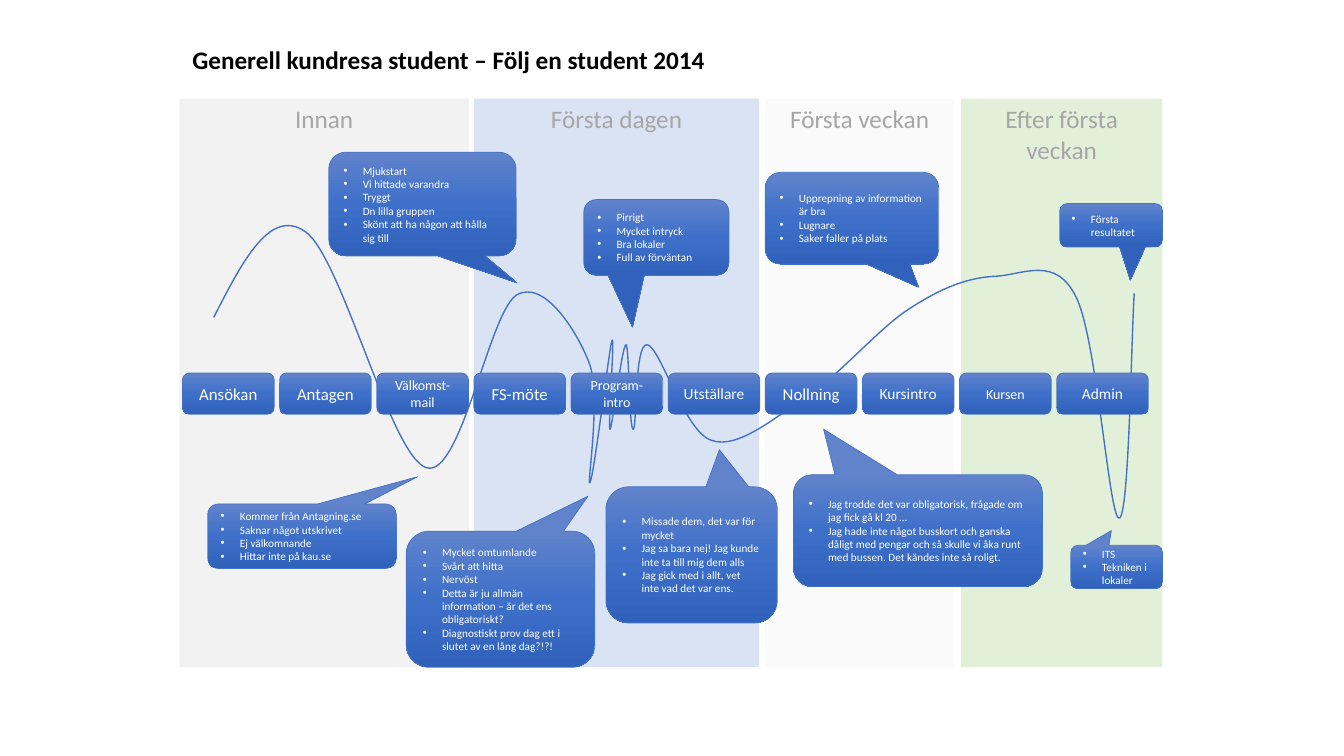
from copy import deepcopy
from lxml import etree
from pptx import Presentation, util as u
from pptx.dml.color import RGBColor
from pptx.enum import shapes, text
from pptx.oxml.ns import qn

BLACK = RGBColor(0x00, 0x00, 0x00)
WHITE = RGBColor(0xFF, 0xFF, 0xFF)
GRAY = RGBColor(0xA6, 0xA6, 0xA6)
BLUE = RGBColor(0x44, 0x72, 0xC4)
SILVER = RGBColor(0xF2, 0xF2, 0xF2)
ICE = RGBColor(0xDA, 0xE3, 0xF3)
PALE = RGBColor(0xFA, 0xFA, 0xFA)
GREEN = RGBColor(0xE2, 0xF0, 0xD9)
SHADES = [
    RGBColor(0x61, 0x83, 0xCB),
    RGBColor(0x3E, 0x70, 0xCA),
    RGBColor(0x30, 0x62, 0xBB),
]

KIND = shapes.MSO_SHAPE
MID = text.MSO_ANCHOR.MIDDLE
TOP = text.MSO_ANCHOR.TOP
LEFT = text.PP_ALIGN.LEFT
MAIN = text.PP_ALIGN.CENTER

deck = Presentation()
deck.slide_width = u.Inches(13.33)
deck.slide_height = u.Inches(7.5)
slide = deck.slides.add_slide(deck.slide_layouts[6])


def write(box, lines, size, color, anchor, align, bold=False, dots=False):
    frame = box.text_frame
    frame.word_wrap = True
    frame.vertical_anchor = anchor
    look = {"name": "Calibri", "size": u.Pt(size), "bold": bold}
    for i, line in enumerate(lines):
        para = frame.paragraphs[0] if i == 0 else frame.add_paragraph()
        para.alignment = align
        if dots:
            props = para._p.get_or_add_pPr()
            props.set("marL", str(u.Inches(0.19)))
            props.set("indent", str(u.Inches(-0.19)))
            etree.SubElement(props, qn("a:buFont")).set("typeface", "Arial")
            etree.SubElement(props, qn("a:buChar")).set("char", "•")
        run = para.add_run()
        run.text = line
        for key, value in look.items():
            setattr(run.font, key, value)
        run.font.color.rgb = color


def block(kind, place):
    box = slide.shapes.add_shape(kind, *map(u.Inches, place))
    box.shadow.inherit = False
    box.fill.gradient()
    box.fill.gradient_angle = 270
    stops = box._element.spPr.find(qn("a:gradFill")).find(qn("a:gsLst"))
    stops.insert(1, deepcopy(stops[0]))
    for i, stop in enumerate(box.fill.gradient_stops):
        stop.position = i / 2
        stop.color.rgb = SHADES[i]
    box.line.color.rgb = BLUE
    box.line.width = u.Pt(0.5)
    return box


bands = [
    ("Innan", 1.78, 2.87, SILVER),
    ("Första dagen", 4.7, 2.83, ICE),
    ("Första veckan", 7.59, 1.87, PALE),
    ("Efter första veckan", 9.53, 2, GREEN),
]
for name, left, width, color in bands:
    place = map(u.Inches, (left, 0.98, width, 5.64))
    band = slide.shapes.add_shape(KIND.RECTANGLE, *place)
    band.shadow.inherit = False
    band.fill.solid()
    band.fill.fore_color.rgb = color
    band.line.fill.background()
    write(band, [name], 18, GRAY, TOP, MAIN)

curves = [
    (2.4, 2.6, 2.68, 2.05, 3.03, 2.3),
    (3.39, 2.55, 3.88, 4.54, 4.23, 4.64),
    (4.57, 4.75, 4.85, 3.11, 5.12, 2.93),
    (5.39, 2.76, 5.72, 3.28, 5.84, 3.59),
    (5.97, 3.9, 5.82, 4.82, 5.85, 4.79),
    (5.89, 4.75, 6.04, 3.47, 6.07, 3.38),
    (6.1, 3.29, 6.03, 4.25, 6.05, 4.26),
    (6.07, 4.27, 6.17, 3.42, 6.21, 3.42),
    (6.24, 3.42, 6.24, 4.26, 6.28, 4.26),
    (6.32, 4.26, 6.29, 3.4, 6.42, 3.42),
    (6.55, 3.44, 6.79, 4.29, 7.06, 4.37),
    (7.32, 4.46, 7.69, 4.14, 8.02, 3.92),
    (8.35, 3.7, 8.73, 3.24, 9.04, 3.05),
    (9.35, 2.85, 9.61, 2.75, 9.89, 2.74),
    (10.16, 2.72, 10.47, 2.54, 10.67, 2.94),
    (10.88, 3.34, 11, 5.15, 11.1, 5.14),
    (11.2, 5.14, 11.22, 3.35, 11.25, 2.91),
]
pen = slide.shapes.build_freeform(u.Inches(2.12), u.Inches(3.15))
ends = [(11.25, 2.24), (11.25, 5.14)]
pen.add_line_segments([tuple(map(u.Inches, end)) for end in ends], close=False)
mood = pen.convert_to_shape()
mood.shadow.inherit = False
mood.fill.background()
mood.line.color.rgb = BLUE
mood.line.width = u.Pt(1)
track = next(mood._element.iter(qn("a:path")))
for line in track.findall(qn("a:lnTo")):
    track.remove(line)
for curve in curves:
    bend = etree.SubElement(track, qn("a:cubicBezTo"))
    for x, y in zip(curve[::2], curve[1::2]):
        spot = etree.SubElement(bend, qn("a:pt"))
        spot.set("x", str(u.Inches(x) - mood.left))
        spot.set("y", str(u.Inches(y) - mood.top))

steps = [
    (["Ansökan"], 12),
    (["Antagen"], 12),
    (["Välkomst-", "mail"], 10),
    (["FS-möte"], 12),
    (["Program-", "intro"], 10),
    (["Utställare"], 11),
    (["Nollning"], 12),
    (["Kursintro"], 11),
    (["Kursen"], 10),
    (["Admin"], 11),
]
for i, (lines, size) in enumerate(steps):
    box = block(KIND.ROUNDED_RECTANGLE, (1.81 + i * 8.67 / 9, 3.7, 0.91, 0.41))
    write(box, lines, size, WHITE, MID, MAIN)

title = slide.shapes.add_textbox(*map(u.Inches, (1.81, 0.27, 9, 0.67)))
write(title, ["Generell kundresa student – Följ en student 2014"], 18, BLACK, MID, LEFT, bold=True)
title.text_frame.paragraphs[0].line_spacing = 0.9

quotes = [
    ((2.06, 5, 1.87, 0.64), (0.614, -0.923), [
        "Kommer från Antagning.se", "Saknar något utskrivet",
        "Ej välkomnande", "Hittar inte på kau.se"]),
    ((4.03, 5.27, 1.87, 1.35), (0.464, -0.758), [
        "Mycket omtumlande", "Svårt att hitta", "Nervöst",
        "Detta är ju allmän information – är det ens obligatoriskt?",
        "Diagnostiskt prov dag ett i slutet av en lång dag?!?!"]),
    ((6.01, 4.83, 1.7, 1.35), (0.162, -0.773), [
        "Missade dem, det var för mycket",
        "Jag sa bara nej! Jag kunde inte ta till mig dem alls",
        "Jag gick med i allt, vet inte vad det var ens."]),
    ((7.87, 4.71, 2.47, 1.11), (-0.379, -0.907), [
        "Jag trodde det var obligatorisk, frågade om jag fick gå kl 20 …",
        "Jag hade inte något busskort och ganska dåligt med pengar och så "
        "skulle vi åka runt med bussen. Det kändes inte så roligt."]),
    ((10.62, 5.41, 0.91, 0.43), (-0.057, -0.84), ["ITS", "Tekniken i lokaler"]),
    ((3.26, 1.51, 1.86, 1.03), (0.505, 0.759), [
        "Mjukstart", "Vi hittade varandra", "Tryggt", "Dn lilla gruppen",
        "Skönt att ha någon att hålla sig till"]),
    ((5.79, 1.98, 1.44, 0.75), (-0.164, 1.188), [
        "Pirrigt", "Mycket intryck", "Bra lokaler", "Full av förväntan"]),
    ((7.59, 1.71, 1.72, 0.91), (0.384, 0.753), [
        "Upprepning av information är bra", "Lugnare", "Saker faller på plats"]),
    ((10.51, 2.02, 1.02, 0.43), (0.187, 1.27), ["Första resultatet"]),
]
for place, tip, lines in quotes:
    box = block(KIND.ROUNDED_RECTANGULAR_CALLOUT, place)
    box.adjustments[0], box.adjustments[1] = tip
    write(box, lines, 8, WHITE, MID, LEFT, dots=True)

deck.save("out.pptx")
